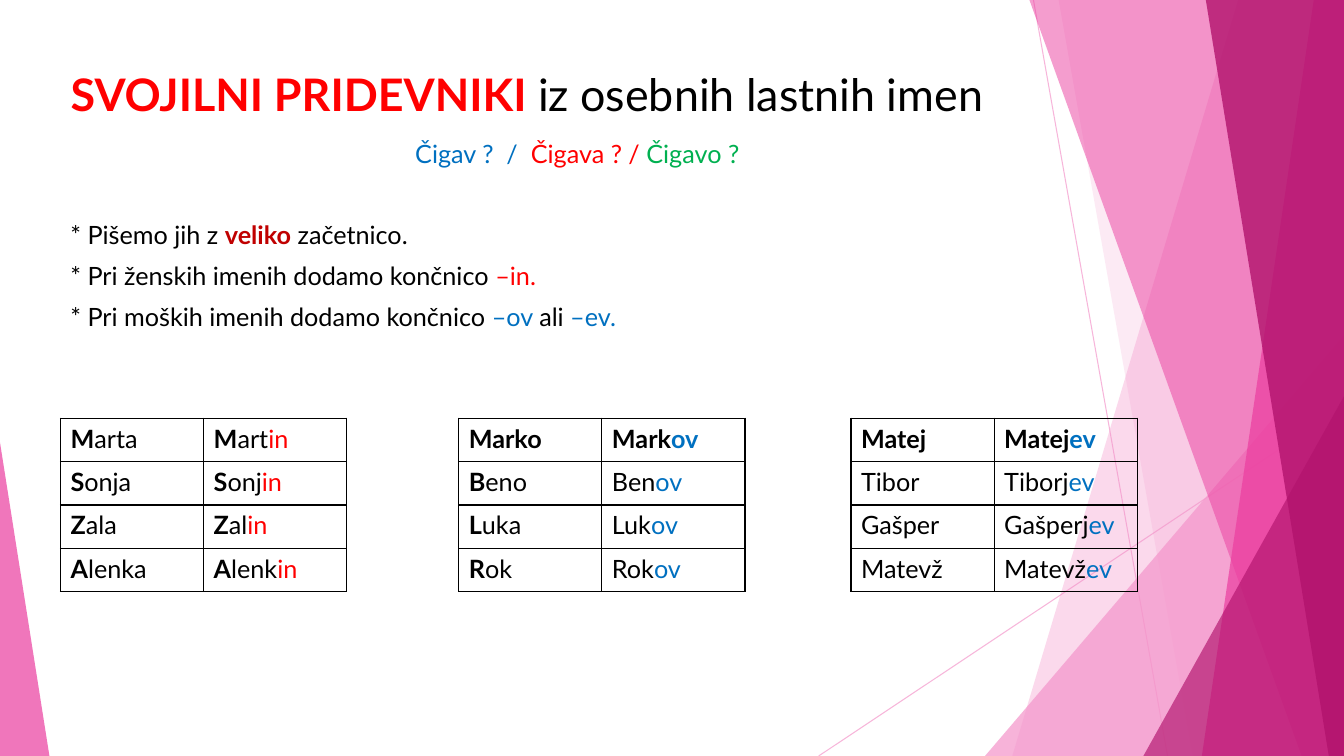
from lxml.etree import SubElement
from pptx import Presentation
from pptx.dml.color import RGBColor
from pptx.enum.shapes import MSO_CONNECTOR, MSO_SHAPE
from pptx.enum.text import MSO_ANCHOR, PP_ALIGN
from pptx.oxml.ns import qn
from pptx.util import Inches, Pt

WIDTH, HEIGHT = 13.33, 7.5
BLACK, RED, DARK_RED, BLUE, GREEN = "000000", "FF0000", "C00000", "0070C0", "00B050"
PALE, PINK, PURPLE = "F496CB", "EB3D9F", "B2136D"
LEFT = 0.6

# Runs are (text, colour, bold)
TITLE = [("SVOJILNI PRIDEVNIKI ", RED, True), ("iz osebnih lastnih imen", BLACK, False)]
QUESTIONS = [("Čigav ?  /  ", BLUE, False), ("Čigava ? / ", RED, False),
             ("Čigavo ?", GREEN, False)]
RULES = [
    [("* Pišemo jih z ", BLACK, False), ("veliko", DARK_RED, True),
     (" začetnico.", BLACK, False)],
    [("* Pri ženskih imenih dodamo končnico ", BLACK, False), ("–in.", RED, False)],
    [("* Pri moških imenih dodamo končnico ", BLACK, False), ("–ov ", BLUE, False),
     ("ali ", BLACK, False), ("–ev.", BLUE, False)],
]
RULE_TOP, RULE_STEP = 2.13, 0.405

# Left edge, ending, its colour, rows of name and stem; the part before | is bold
NAME_TABLES = [
    (LEFT, "in", RED, [("M|arta", "M|art"), ("S|onja", "S|onj"),
                       ("Z|ala", "Z|al"), ("A|lenka", "A|lenk")]),
    (4.55, "ov", BLUE, [("Marko|", "Mark|"), ("B|eno", "|Ben"),
                        ("L|uka", "|Luk"), ("R|ok", "|Rok")]),
    (8.44, "ev", BLUE, [("Matej|", "Matej|"), ("|Tibor", "|Tiborj"),
                        ("|Gašper", "|Gašperj"), ("|Matevž", "|Matevž")]),
]
TABLE_TOP, COLUMN, ROW = 4.15, 1.42, 0.43

RAYS = [((10.25, 0), (11.58, HEIGHT)), ((WIDTH, 4.03), (8.12, HEIGHT))]
# Bands reach the right edge: (left at top, left at bottom, colour, opacity)
# Wedges are triangles: (left, top, width, apex, colour, opacity)
DECORATION = [
    ("band", 12.28, 10.04, PALE, 36),
    ("band", 10.5, 11.83, PALE, 20),
    ("wedge", 9.77, 3.33, 3.56, 1, PALE, 72),
    ("band", 10.21, 12.91, PINK, 50),
    ("band", 13.03, 11.92, PINK, 70),
    ("band", 11.96, 13.18, PURPLE, 80),
    ("wedge", 11.34, 3.93, 1.99, 1, PURPLE, 66),
    ("wedge", 0, 4.39, 0.49, 0, PINK, 70),
]


def rgb(colour):
    return RGBColor.from_string(colour)


def set_opacity(element, percent):
    colour = next(element.iter(qn("a:srgbClr")))
    SubElement(colour, qn("a:alpha"), val=str(percent * 1000))


def paint(shape, colour, opacity):
    shape.shadow.inherit = False
    shape.fill.solid()
    shape.fill.fore_color.rgb = rgb(colour)
    set_opacity(shape._element.spPr, opacity)
    shape.line.fill.background()


def add_band(shapes, top_left, bottom_left, colour, opacity):
    builder = shapes.build_freeform(Inches(top_left), 0, scale=1.0)
    corners = [(WIDTH, 0), (WIDTH, HEIGHT), (bottom_left, HEIGHT)]
    builder.add_line_segments([(Inches(x), Inches(y)) for x, y in corners], close=True)
    paint(builder.convert_to_shape(), colour, opacity)


def add_wedge(shapes, left, top, width, apex, colour, opacity):
    wedge = shapes.add_shape(MSO_SHAPE.ISOSCELES_TRIANGLE, Inches(left), Inches(top),
                             Inches(width), Inches(HEIGHT - top))
    wedge.adjustments[0] = apex
    paint(wedge, colour, opacity)


def add_ray(shapes, start, end):
    ray = shapes.add_connector(MSO_CONNECTOR.STRAIGHT, *map(Inches, start + end))
    ray.line.color.rgb = rgb(PALE)
    ray.line.width = Pt(0.75)
    set_opacity(ray._element.spPr, 70)
    SubElement(ray._element.spPr, qn("a:effectLst"))


def write(frame, runs, size=18, align=PP_ALIGN.LEFT):
    para = frame.paragraphs[0]
    para.alignment = align
    for text, colour, bold in runs:
        span = para.add_run()
        span.text = text
        for name, value in {"name": "Lato", "size": Pt(size), "bold": bold}.items():
            setattr(span.font, name, value)
        span.font.color.rgb = rgb(colour)


def add_text(shapes, left, top, width, runs, align=PP_ALIGN.LEFT, wrap=False):
    box = shapes.add_textbox(Inches(left), Inches(top), Inches(width), Inches(0.4))
    box.text_frame.word_wrap = wrap
    write(box.text_frame, runs, align=align)


def add_borders(cell):
    properties = cell._tc.get_or_add_tcPr()
    for side in ("lnL", "lnR", "lnT", "lnB"):
        line = SubElement(properties, qn(f"a:{side}"), w=str(Pt(1)))
        SubElement(SubElement(line, qn("a:solidFill")), qn("a:srgbClr"), val=BLACK)


def split_bold(word):
    start, rest = word.split("|")
    return [(text, BLACK, bold) for text, bold in ((start, True), (rest, False)) if text]


def add_name_table(shapes, left, ending, colour, rows):
    table = shapes.add_table(len(rows), 2, Inches(left), Inches(TABLE_TOP),
                             Inches(2 * COLUMN), Inches(len(rows) * ROW)).table
    table.first_row = table.horz_banding = False
    for row, (name, stem) in enumerate(rows):
        possessive = split_bold(stem) + [(ending, colour, stem.endswith("|"))]
        for column, runs in enumerate((split_bold(name), possessive)):
            cell = table.cell(row, column)
            add_borders(cell)
            cell.fill.background()
            write(cell.text_frame, runs)


def main():
    deck = Presentation()
    deck.slide_width, deck.slide_height = Inches(WIDTH), Inches(HEIGHT)
    page = deck.slides.add_slide(deck.slide_layouts[5])
    shapes = page.shapes

    for start, end in RAYS:
        add_ray(shapes, start, end)
    draw = {"band": add_band, "wedge": add_wedge}
    for kind, *values in DECORATION:
        draw[kind](shapes, *values)

    title = shapes.title
    place = {"left": LEFT, "top": 0.61, "width": 9.27, "height": 0.98}
    for name, value in place.items():
        setattr(title, name, Inches(value))
    title.text_frame.word_wrap = False
    title.text_frame.vertical_anchor = MSO_ANCHOR.TOP
    write(title.text_frame, TITLE, size=32)

    add_text(shapes, 3.55, 1.32, 4.35, QUESTIONS, PP_ALIGN.CENTER, wrap=True)
    for number, runs in enumerate(RULES):
        add_text(shapes, LEFT, RULE_TOP + number * RULE_STEP, 5.69, runs)
    for name_table in NAME_TABLES:
        add_name_table(shapes, *name_table)
    deck.save("out.pptx")


if __name__ == "__main__":
    main()
